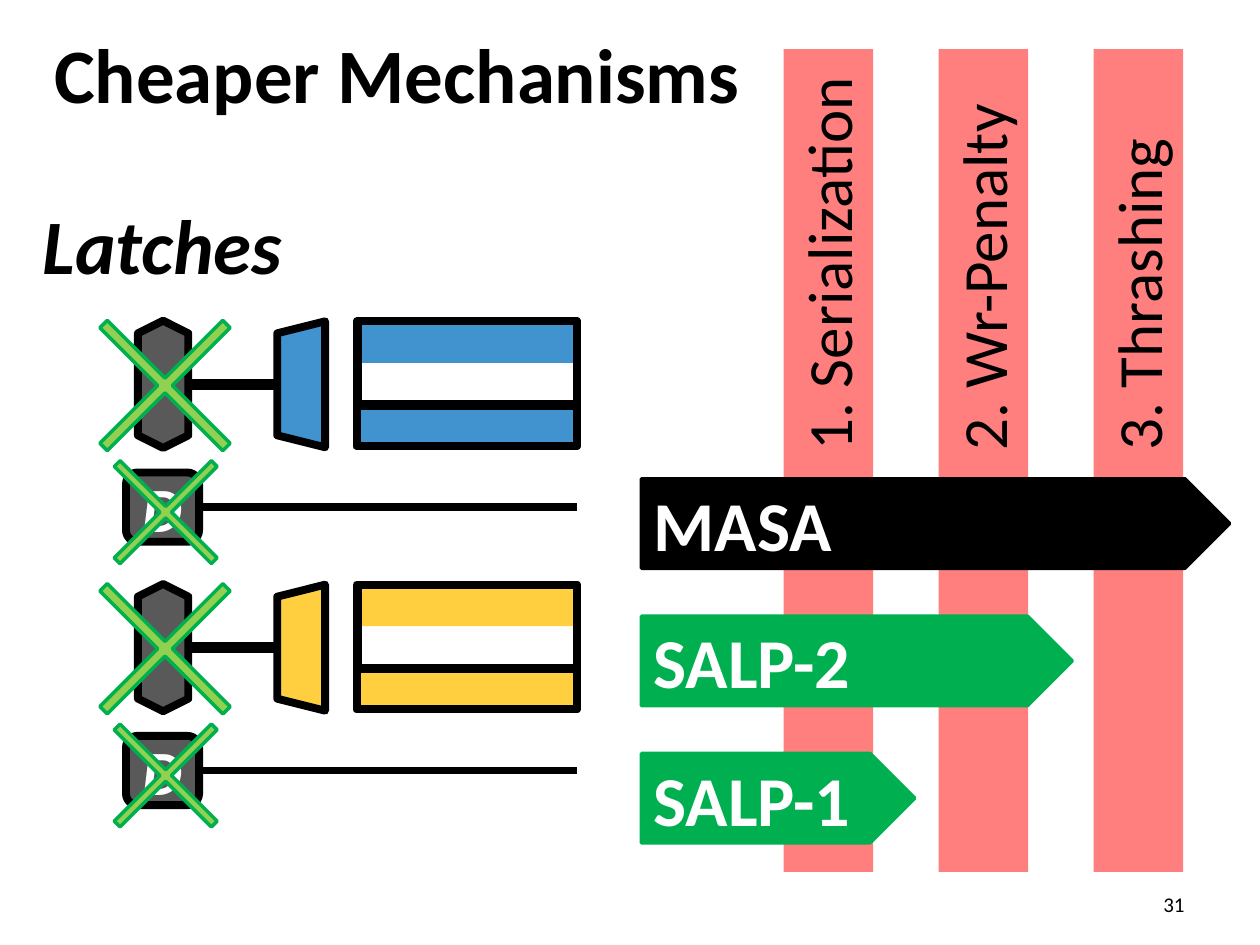
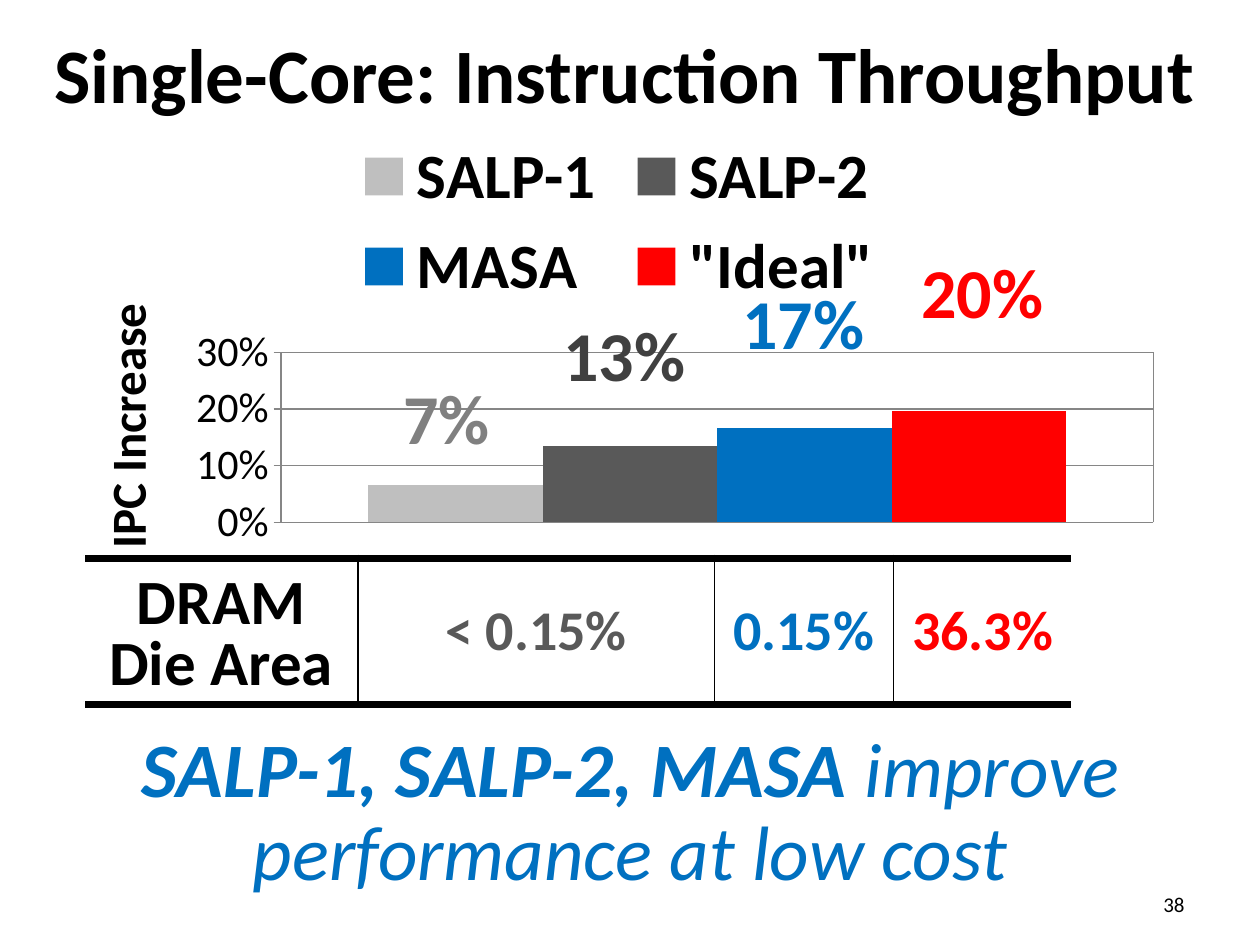
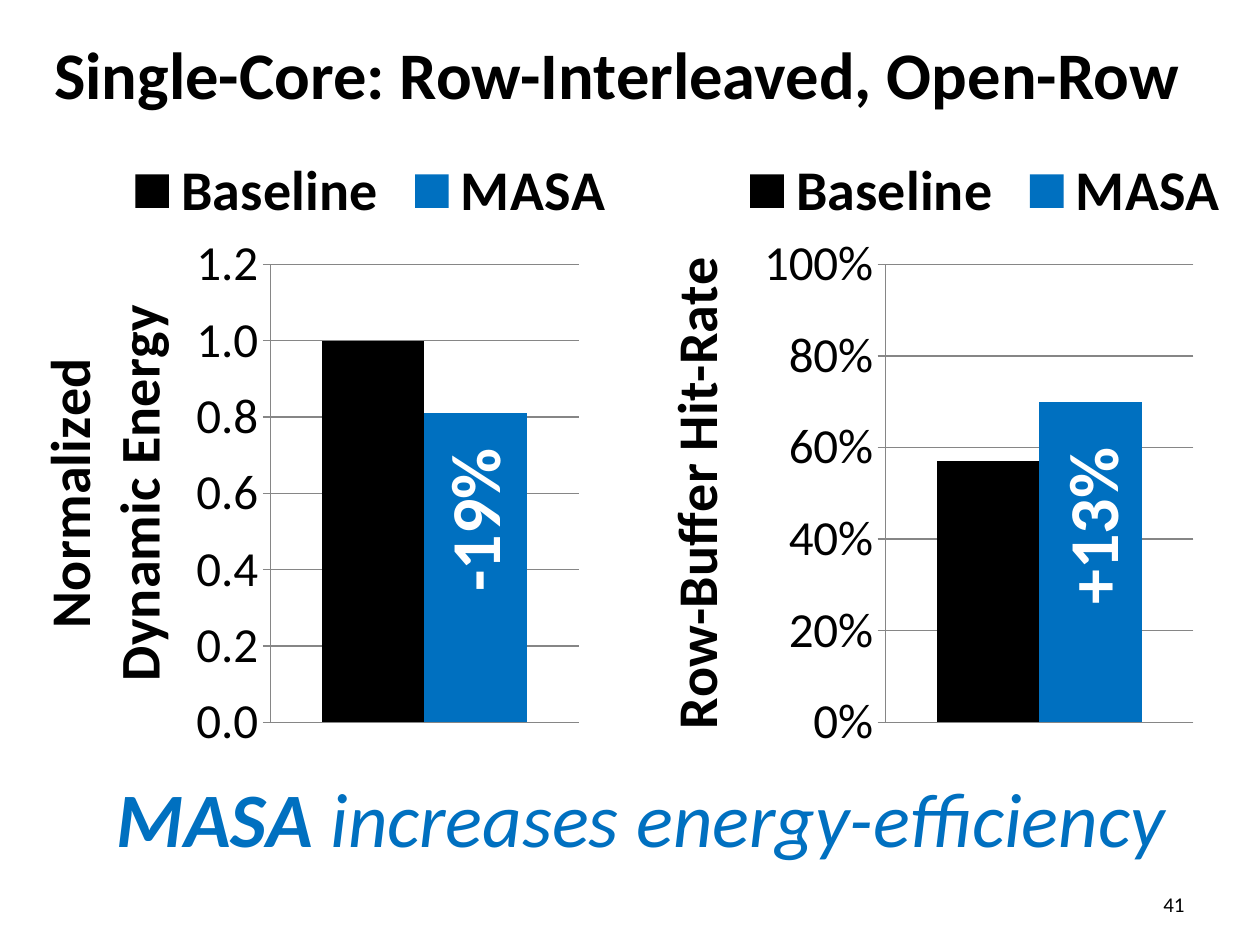
"""Build three slides on DRAM subarray mechanisms and their single-core results."""
import dataclasses

import pptx
import pptx.chart.data
import pptx.dml.color
import pptx.enum.chart
import pptx.enum.shapes
import pptx.enum.text
import pptx.oxml
import pptx.oxml.ns
import pptx.util

Inches = pptx.util.Inches
Pt = pptx.util.Pt
RGB = pptx.dml.color.RGBColor.from_string
PRESET = pptx.enum.shapes.MSO_SHAPE
ALIGN = pptx.enum.text.PP_ALIGN
ANCHOR = pptx.enum.text.MSO_ANCHOR
CHART = pptx.enum.chart
qn = pptx.oxml.ns.qn


@dataclasses.dataclass(frozen=True)
class Theme:
    font: str = "Calibri"
    black: str = "000000"
    white: str = "FFFFFF"
    blue: str = "0070C0"
    yellow: str = "FFC000"
    red: str = "FF0000"
    green: str = "00B050"
    lime: str = "92D050"
    dark: str = "595959"
    light: str = "BFBFBF"
    grid: str = "868686"
    title: int = 44
    label: int = 40
    heading: int = 36
    cell: int = 32
    number: int = 12
    stroke: float = 4.5
    thin: int = 2


theme = Theme()


def write(frame, spans, size, color=theme.black, align=ALIGN.LEFT, anchor=ANCHOR.TOP, spacing=None):
    """Fill a text frame with one paragraph of (text, bold, italic) spans."""
    frame.word_wrap = True
    frame.vertical_anchor = anchor
    para = frame.paragraphs[0]
    para.alignment = align
    para.line_spacing = spacing
    for text, bold, italic in spans:
        span = para.add_run()
        span.text = text
        span.font.name = theme.font
        span.font.size = Pt(size)
        span.font.bold = bold
        span.font.italic = italic
        span.font.color.rgb = RGB(color)


def draw(slide, preset, at, fill=None, width=None, line=theme.black, opacity=100, rotation=0):
    """Add a preset shape; without a fill or a width that part stays empty."""
    shape = slide.shapes.add_shape(preset, *map(Inches, at))
    shape.shadow.inherit = False
    shape.rotation = rotation
    if fill:
        shape.fill.solid()
        shape.fill.fore_color.rgb = RGB(fill)
        if opacity < 100:
            color = shape._element.spPr.find(qn("a:solidFill"))[0]
            color.append(pptx.oxml.parse_xml(
                f'<a:alpha {pptx.oxml.ns.nsdecls("a")} val="{opacity * 1000}"/>'))
    else:
        shape.fill.background()
    if width:
        shape.line.width = Pt(width)
        shape.line.color.rgb = RGB(line)
    else:
        shape.line.fill.background()
    return shape


deck = pptx.Presentation()
deck.slide_width, deck.slide_height = Inches(10), Inches(7.5)

headings = [
    ("Cheaper Mechanisms", theme.title, "31"),
    ("Single-Core: Instruction Throughput", theme.title, "38"),
    ("Single-Core: Row-Interleaved, Open-Row", 38, "41"),
]
pages = []
for heading, size, number in headings:
    page = deck.slides.add_slide(deck.slide_layouts[5])
    title = page.shapes.title
    title.left, title.top, title.width, title.height = map(Inches, (0.33, 0.08, 9.33, 1))
    write(title.text_frame, [(heading, True, False)], size, anchor=ANCHOR.MIDDLE)
    box = page.shapes.add_textbox(*map(Inches, (7.17, 7, 2.33, 0.35)))
    write(box.text_frame, [(number, False, False)], theme.number,
          align=ALIGN.RIGHT, anchor=ANCHOR.MIDDLE)
    pages.append(page)
mechanisms, throughput, energy = pages

box = mechanisms.shapes.add_textbox(*map(Inches, (0.19, 1.64, 2.2, 0.59)))
write(box.text_frame, [("Latches", True, True)], theme.title,
      align=ALIGN.CENTER, anchor=ANCHOR.MIDDLE)

for top, color in [(2.55, theme.blue), (4.64, theme.yellow)]:
    middle = top + 0.5
    draw(mechanisms, PRESET.RECTANGLE, (2.83, top, 1.75, 0.99), theme.white, theme.stroke)
    draw(mechanisms, PRESET.RECTANGLE, (2.83, top + 0.66, 1.75, 0.33), color, theme.stroke, opacity=75)
    draw(mechanisms, PRESET.RECTANGLE, (2.84, top, 1.74, 0.33), color, opacity=75)
    draw(mechanisms, PRESET.RECTANGLE, (2.84, top, 1.74, 0.67), width=theme.stroke)
    draw(mechanisms, PRESET.TRAPEZOID, (1.89, middle - 0.19, 1, 0.38), color, theme.stroke,
         opacity=75, rotation=270)
    draw(mechanisms, PRESET.HEXAGON, (0.79, middle - 0.2, 1.01, 0.4), theme.dark, theme.stroke,
         rotation=270)
    latch = draw(mechanisms, PRESET.ROUNDED_RECTANGLE, (1, top + 1.2, 0.58, 0.55),
                 theme.dark, theme.stroke)
    write(latch.text_frame, [("D", True, True)], theme.heading, theme.white,
          ALIGN.CENTER, ANCHOR.MIDDLE)
    for start, end, y, width in [(1.49, 2.2, middle, 6), (1.58, 4.58, top + 1.48, theme.stroke)]:
        wire = mechanisms.shapes.add_connector(
            pptx.enum.shapes.MSO_CONNECTOR.STRAIGHT, *map(Inches, (start, y, end, y)))
        wire.line.width = Pt(width)
        wire.line.color.rgb = RGB(theme.black)
        wire._element.spPr.append(pptx.oxml.parse_xml(
            f'<a:effectLst {pptx.oxml.ns.nsdecls("a")}/>'))
    wire.begin_connect(latch, 3)
    wire.end_y = wire.begin_y
    for left, offset, side in [(0.77, 0.97, 1.09), (0.62, -0.18, 1.38)]:
        cross = draw(mechanisms, PRESET.CROSS, (left, top + offset, side, side),
                     theme.lime, theme.thin, theme.green, rotation=45)
        cross.adjustments[0] = 0.47

for index, problem in enumerate(["1. Serialization", "2. Wr-Penalty", "3. Thrashing"]):
    bar = draw(mechanisms, PRESET.RECTANGLE, (3.31 + 1.23 * index, 3.3, 6.53, 0.71),
               theme.red, opacity=50, rotation=270)
    write(bar.text_frame, [(problem, False, False)], theme.heading)
    bar.text_frame.paragraphs[0]._p.get_or_add_pPr().set("marL", str(Inches(3.25)))

for index, (name, color) in enumerate(
        [("MASA", theme.black), ("SALP-2", theme.green), ("SALP-1", theme.green)]):
    arrow = draw(mechanisms, PRESET.PENTAGON, (5.09, 3.8 + 1.09 * index, 4.67 - 1.25 * index, 0.71),
                 color, theme.thin, color)
    write(arrow.text_frame, [(name, True, False)], theme.label, theme.white, anchor=ANCHOR.MIDDLE)

energy_plot = {"x": 0.363, "y": 0.206, "w": 0.422, "h": 0.736}
charts = [
    (throughput, (0.5, 0.92, 8.83, 3.5), ["IPC Increase"], "0%", 0.3, 0.1, (28, 24, 36), None,
     [("SALP-1", 0.066, theme.light), ("SALP-2", 0.134, theme.dark),
      ("MASA", 0.167, theme.blue), ('"Ideal"', 0.196, theme.red)]),
    (energy, (0.04, 1.08, 5.8, 4.94), ["Normalized", "Dynamic Energy"], "#,##0.0", 1.2, 0.2,
     (32, 28, 32), energy_plot, [("Baseline", 1, theme.black), ("MASA", 0.81, theme.blue)]),
    (energy, (4.92, 1.08, 5.8, 4.94), ["Row-Buffer Hit-Rate"], "0%", 1, 0.2,
     (32, 28, 32), energy_plot, [("Baseline", 0.57, theme.black), ("MASA", 0.7, theme.blue)]),
]
for page, at, captions, number_format, maximum, step, sizes, plot_area, bars in charts:
    caption_size, tick_size, legend_size = sizes
    data = pptx.chart.data.CategoryChartData()
    data.categories = ["1"]
    for name, value, color in bars:
        data.add_series(name, [value])
    chart = page.shapes.add_chart(
        CHART.XL_CHART_TYPE.COLUMN_CLUSTERED, *map(Inches, at), data).chart
    chart.has_title = False
    chart.font.name = theme.font
    chart.font.size = Pt(10)
    chart.font.color.rgb = RGB(theme.black)
    chart.has_legend = True
    chart.legend.position = CHART.XL_LEGEND_POSITION.TOP
    chart.legend.include_in_layout = False
    chart.legend.font.size = Pt(legend_size)
    chart.legend.font.bold = True

    plot = chart.plots[0]
    plot.gap_width = 100
    plot.overlap = 0
    plot.vary_by_categories = False
    for series, (name, value, color) in zip(plot.series, bars):
        series.format.fill.solid()
        series.format.fill.fore_color.rgb = RGB(color)

    chart.category_axis.visible = False
    axis = chart.value_axis
    axis.minimum_scale, axis.maximum_scale, axis.major_unit = 0, maximum, step
    axis.major_tick_mark = CHART.XL_TICK_MARK.OUTSIDE
    axis.tick_labels.number_format = number_format
    axis.tick_labels.number_format_is_linked = False
    axis.tick_labels.font.size = Pt(tick_size)
    axis.format.line.color.rgb = RGB(theme.grid)
    axis.major_gridlines.format.line.color.rgb = RGB(theme.grid)
    if page is throughput:
        chart.category_axis.major_gridlines.format.line.color.rgb = RGB(theme.grid)
    frame = axis.axis_title.text_frame
    frame.text = "\n".join(captions)
    for para in frame.paragraphs:
        for span in para.runs:
            span.font.name = theme.font
            span.font.size = Pt(caption_size)
            span.font.bold = True

    if plot_area:
        area = chart._chartSpace.chart.plotArea
        for layout in area.findall(qn("c:layout")):
            area.remove(layout)
        places = "".join(f'<c:{key} val="{value}"/>' for key, value in plot_area.items())
        area.insert(0, pptx.oxml.parse_xml(
            f'<c:layout {pptx.oxml.ns.nsdecls("c")}><c:manualLayout><c:layoutTarget val="inner"/>'
            f'<c:xMode val="edge"/><c:yMode val="edge"/>{places}</c:manualLayout></c:layout>'))

labels = [
    (throughput, "20%", (7.17, 1.92, 1.25, 0.77), theme.red, 0),
    (throughput, "17%", (5.75, 2.17, 1.25, 0.77), theme.blue, 0),
    (throughput, "13%", (4.33, 2.42, 1.25, 0.77), "404040", 0),
    (throughput, "7%", (2.92, 2.92, 1.25, 0.77), "808080", 0),
    (energy, "-19%", (3.04, 3.74, 1.42, 0.77), theme.white, 270),
    (energy, "+13%", (7.87, 3.79, 1.58, 0.77), theme.white, 270),
]
for page, text, at, color, rotation in labels:
    box = page.shapes.add_textbox(*map(Inches, at))
    box.rotation = rotation
    write(box.text_frame, [(text, True, False)], theme.label, color, ALIGN.CENTER)

takeaways = [
    (throughput, (1, 5.75, 8.01, 1.43), "SALP-1, SALP-2, MASA", " improve performance at low cost"),
    (energy, (0.5, 6.15, 9.18, 0.77), "MASA", " increases energy-efficiency"),
]
for page, at, subject, claim in takeaways:
    box = page.shapes.add_textbox(*map(Inches, at))
    write(box.text_frame, [(subject, True, True), (claim, False, True)], theme.title,
          theme.blue, ALIGN.CENTER, spacing=0.9)

columns = [
    (2.17, "DRAM Die Area", theme.heading, theme.black, ANCHOR.BOTTOM, 0.8),
    (2.83, "< 0.15%", theme.cell, theme.dark, ANCHOR.MIDDLE, None),
    (1.42, "0.15%", theme.cell, theme.blue, ANCHOR.MIDDLE, None),
    (1.42, "36.3%", theme.cell, theme.red, ANCHOR.MIDDLE, None),
]
table = throughput.shapes.add_table(
    1, len(columns), *map(Inches, (0.67, 4.43, 7.84, 1.16))).table
table.first_row = table.horz_banding = False
for index, (width, text, size, color, anchor, spacing) in enumerate(columns):
    table.columns[index].width = Inches(width)
    cell = table.cell(0, index)
    borders = {"lnL": 1, "lnR": 1, "lnT": theme.stroke, "lnB": theme.stroke}
    if index == 0:
        del borders["lnL"]
    if index == len(columns) - 1:
        del borders["lnR"]
    for edge, weight in borders.items():
        cell._tc.get_or_add_tcPr().append(pptx.oxml.parse_xml(
            f'<a:{edge} {pptx.oxml.ns.nsdecls("a")} w="{Pt(weight)}"><a:solidFill>'
            f'<a:srgbClr val="{theme.black}"/></a:solidFill></a:{edge}>'))
    cell.fill.background()
    write(cell.text_frame, [(text, True, False)], size, color, ALIGN.CENTER, spacing=spacing)
    cell.vertical_anchor = anchor

deck.save("out.pptx")
